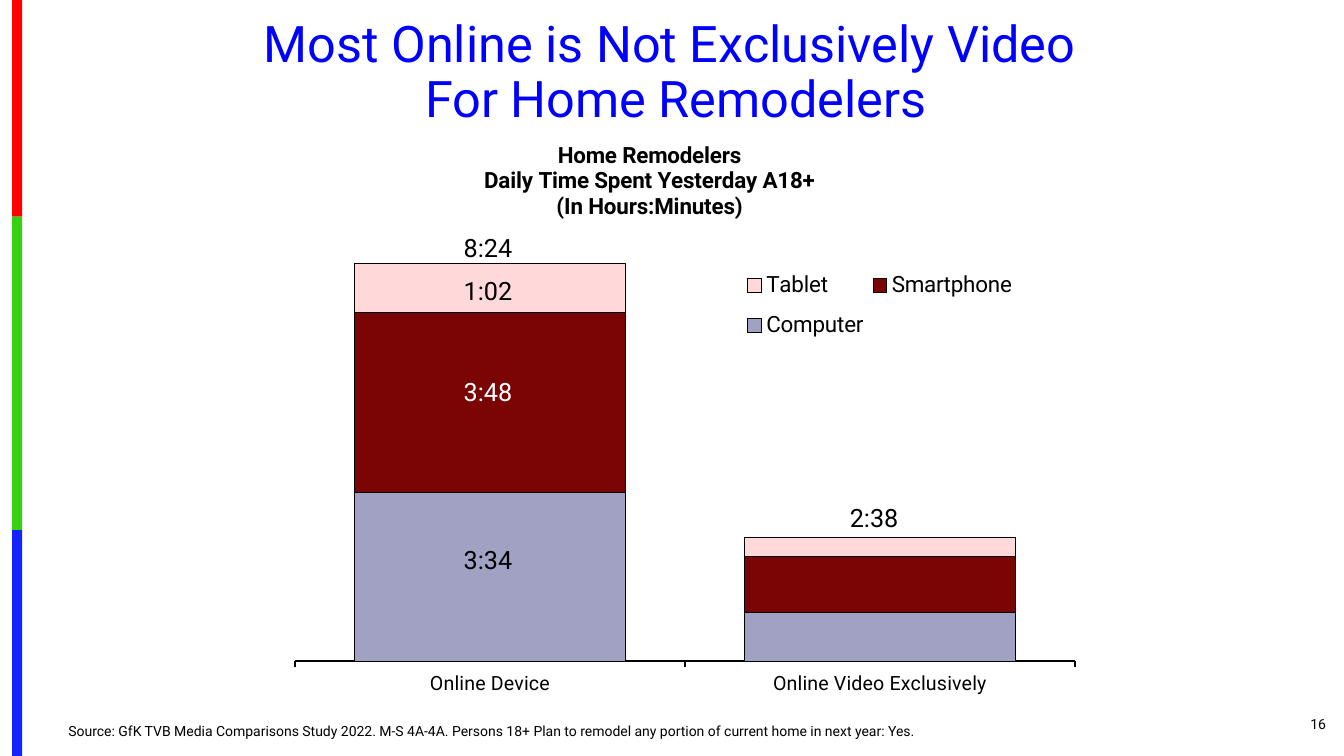
"""Build the slide on online time among home remodelers."""
from lxml import etree
from pptx import Presentation
from pptx.chart.data import CategoryChartData
from pptx.dml.color import RGBColor
from pptx.enum.chart import XL_CHART_TYPE, XL_LEGEND_POSITION, XL_TICK_MARK
from pptx.enum.shapes import MSO_SHAPE
from pptx.enum.text import MSO_ANCHOR, PP_ALIGN
from pptx.oxml.ns import qn
from pptx.util import Pt

STACKED = XL_CHART_TYPE.COLUMN_STACKED
RIGHT_SIDE = XL_LEGEND_POSITION.RIGHT
OUTSIDE, NO_TICK = XL_TICK_MARK.OUTSIDE, XL_TICK_MARK.NONE
RECT = MSO_SHAPE.RECTANGLE
TOP, MIDDLE, BOTTOM = MSO_ANCHOR.TOP, MSO_ANCHOR.MIDDLE, MSO_ANCHOR.BOTTOM
LEFT, CENTER, RIGHT = PP_ALIGN.LEFT, PP_ALIGN.CENTER, PP_ALIGN.RIGHT

PX = 9144
FONT = "Roboto"
COLORS = {
    "black": "000000", "white": "FFFFFF", "title": "0000FF",
    "red": "FE0000", "green": "36CF12", "blue": "1322FE",
    "Computer": "A1A1C3", "Smartphone": "790505", "Tablet": "FFD9D9",
}
TIMES = {"Computer": (94, 27), "Smartphone": (100, 31), "Tablet": (27, 11)}
STRIPS = (("red", 215), ("green", 311), ("blue", 224))
LABELS = (
    ("2:38", 833, 493, "black"),
    ("8:24", 450, 226, "black"),
    ("1:02", 450, 268, "black"),
    ("3:48", 450, 368, "white"),
    ("3:34", 450, 535, "black"),
)
HEADING = ("Most Online is Not Exclusively Video ", "For Home Remodelers")
CAPTION = "Home Remodelers\nDaily Time Spent Yesterday A18+\n(In Hours:Minutes)"
SOURCE = ("Source: GfK TVB Media Comparisons Study 2022. M-S 4A-4A. "
          "Persons 18+ Plan to remodel any portion of current home in next year: Yes.")


def color(name):
    """Return the named colour."""
    return RGBColor.from_string(COLORS[name])


def scale(*lengths):
    """Turn px lengths into EMU."""
    return [length * PX for length in lengths]


def style(font, size, tint="black", bold=False):
    """Apply the slide's type style to a font."""
    for key, value in {"name": FONT, "size": Pt(size), "bold": bold}.items():
        setattr(font, key, value)
    font.color.rgb = color(tint)


def outline(line, width):
    """Draw a black line of the given width."""
    line.color.rgb = color("black")
    line.width = Pt(width)


def add_strip(slide, top, height, tint):
    """Add one piece of the colour band at the left edge."""
    strip = slide.shapes.add_shape(RECT, *scale(12, top, 10, height))
    strip.shadow.inherit = False
    strip.fill.solid()
    strip.fill.fore_color.rgb = color(tint)
    strip.line.fill.background()


def add_text(slide, box, lines, size, tint="black", align=LEFT, anchor=TOP,
             wrap=True, spacing=1.0):
    """Add a text box with one paragraph per line."""
    frame = slide.shapes.add_textbox(*scale(*box)).text_frame
    for key, value in {"word_wrap": wrap, "vertical_anchor": anchor}.items():
        setattr(frame, key, value)
    frame.text = "\n".join(lines)
    for para in frame.paragraphs:
        for key, value in {"alignment": align, "line_spacing": spacing}.items():
            setattr(para, key, value)
        style(para.runs[0].font, size, tint)


def place(chart, name, before, rule, inner=False):
    """Fix the layout of a chart item, given as fractions of the chart."""
    item = chart.element.find(".//" + qn(name))
    for old in item.findall(qn("c:layout")):
        item.remove(old)
    layout = etree.Element(qn("c:layout"))
    manual = etree.SubElement(layout, qn("c:manualLayout"))
    values = {"layoutTarget": "inner"} if inner else {}
    values.update(xMode="edge", yMode="edge", **rule)
    for key, value in values.items():
        etree.SubElement(manual, qn(f"c:{key}")).set("val", str(value))
    item.find(qn(before)).addprevious(layout)


def set_title(chart):
    """Write the chart title."""
    frame = chart.chart_title.text_frame
    frame.text = CAPTION
    for para in frame.paragraphs:
        style(para.runs[0].font, 16, bold=True)
    place(chart, "c:title", "c:overlay", {"x": 0.32, "y": 0.1})


def set_axes(chart):
    """Format the category axis and hide the value axis."""
    cat, val = chart.category_axis, chart.value_axis
    for key, value in {"major_tick_mark": OUTSIDE, "minor_tick_mark": NO_TICK,
                       "has_major_gridlines": False}.items():
        setattr(cat, key, value)
    style(cat.tick_labels.font, 14)
    outline(cat.format.line, 1.5)
    for key, value in {"visible": False, "has_major_gridlines": False,
                       "minimum_scale": 0, "maximum_scale": 252}.items():
        setattr(val, key, value)


def set_legend(chart):
    """Show the legend beside the first column."""
    chart.has_legend = True
    legend = chart.legend
    for key, value in {"position": RIGHT_SIDE, "include_in_layout": False}.items():
        setattr(legend, key, value)
    style(legend.font, 16)
    place(chart, "c:legend", "c:overlay",
          {"x": 0.61, "y": 0.29, "w": 0.32, "h": 0.15})


def add_columns(slide):
    """Add the stacked columns of daily time by device."""
    data = CategoryChartData()
    data.categories = ("Online Device", "Online Video Exclusively")
    for name, values in TIMES.items():
        data.add_series(name, values)
    frame = slide.shapes.add_chart(STACKED, *scale(196, 75, 879, 625), data)
    chart = frame.chart
    style(chart.font, 10)
    set_title(chart)
    set_axes(chart)
    set_legend(chart)
    plot = chart.plots[0]
    for key, value in {"gap_width": 44, "overlap": 100,
                       "vary_by_categories": False}.items():
        setattr(plot, key, value)
    for series in plot.series:
        series.format.fill.solid()
        series.format.fill.fore_color.rgb = color(series.name)
        outline(series.format.line, 0.75)
    place(chart, "c:plotArea", "c:barChart",
          {"x": 0.11, "y": 0.21, "w": 0.88, "h": 0.72}, inner=True)


def main():
    """Build and save the slide."""
    deck = Presentation()
    deck.slide_width, deck.slide_height = scale(1333, 750)
    slide = deck.slides.add_slide(deck.slide_layouts[6])
    top = 0
    for tint, height in STRIPS:
        add_strip(slide, top, height, tint)
        top += height
    add_text(slide, (1217, 698, 108, 40), ["16"], 10, align=RIGHT, anchor=MIDDLE)
    add_columns(slide)
    add_text(slide, (58, 714, 1067, 25), [SOURCE], 10, anchor=BOTTOM, spacing=0.9)
    for text, left, y, tint in LABELS:
        add_text(slide, (left, y, 71, 40), [text], 18, tint, wrap=False)
    add_text(slide, (33, 14, 1275, 119), HEADING, 36, "title", CENTER, spacing=0.9)
    deck.save("out.pptx")


if __name__ == "__main__":
    main()
